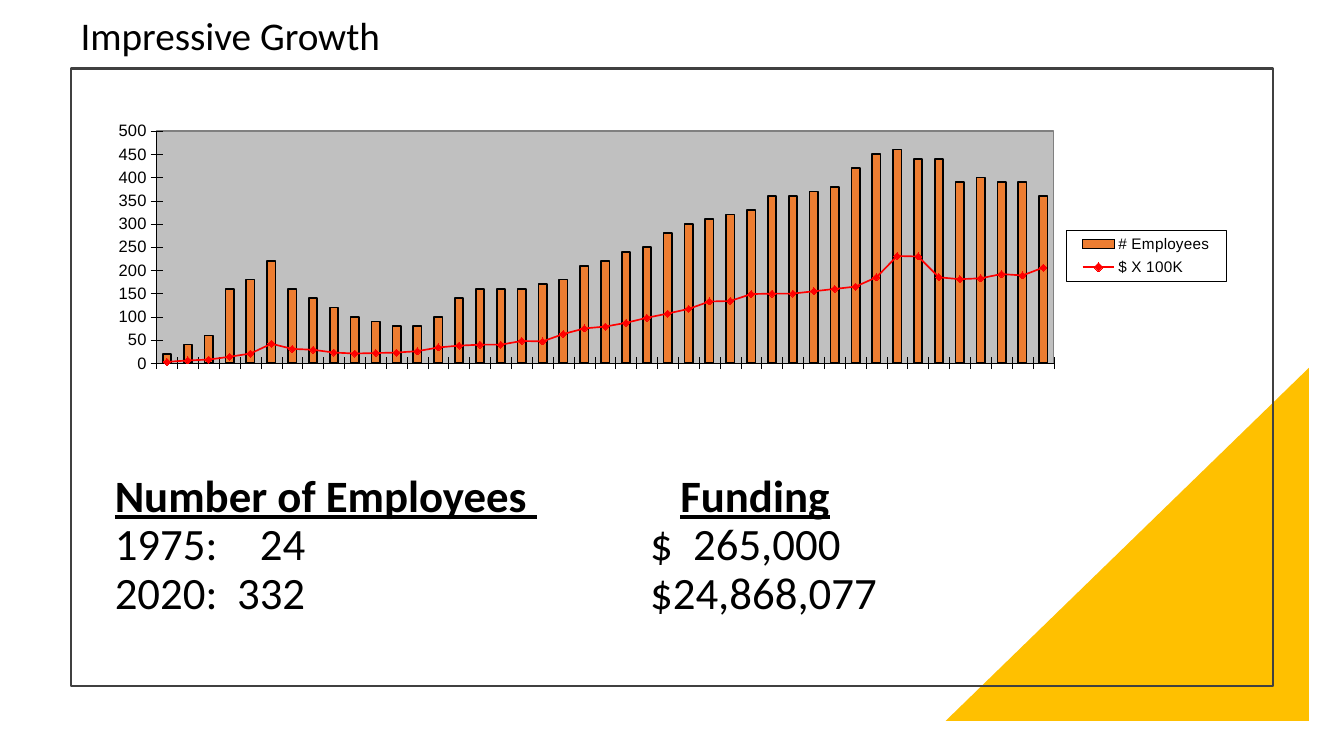
from dataclasses import dataclass

from lxml import etree
from pptx import Presentation
from pptx.chart.data import CategoryChartData
from pptx.dml.color import RGBColor
from pptx.enum.chart import (XL_CHART_TYPE, XL_LEGEND_POSITION, XL_MARKER_STYLE,
                             XL_TICK_LABEL_POSITION, XL_TICK_MARK)
from pptx.enum.shapes import MSO_SHAPE
from pptx.enum.text import MSO_ANCHOR
from pptx.oxml import parse_xml
from pptx.oxml.ns import nsdecls, qn
from pptx.util import Inches, Pt

COLUMNS = XL_CHART_TYPE.COLUMN_CLUSTERED
LEGEND_RIGHT = XL_LEGEND_POSITION.RIGHT
DIAMOND = XL_MARKER_STYLE.DIAMOND
CROSS, NO_TICK = XL_TICK_MARK.CROSS, XL_TICK_MARK.NONE
NO_LABELS = XL_TICK_LABEL_POSITION.NONE
RECTANGLE, TRIANGLE = MSO_SHAPE.RECTANGLE, MSO_SHAPE.RIGHT_TRIANGLE
TOP, BOTTOM = MSO_ANCHOR.TOP, MSO_ANCHOR.BOTTOM

SLIDE_WIDTH, SLIDE_HEIGHT = Inches(13.33), Inches(7.5)
BLACK, WHITE, AMBER, GRAPHITE = "000000", "FFFFFF", "FFC000", "404040"
ORANGE, RED, SILVER, GRAY = "ED7D31", "FF0000", "C0C0C0", "808080"
SCALE_TOP, SCALE_STEP = 500, 50

YEARS = [str(year) for year in range(1975, 2018)]
EMPLOYEES = [20, 40, 60, 160, 180, 220, 160, 140, 120, 100, 90, 80, 80, 100, 140,
             160, 160, 160, 170, 180, 210, 220, 240, 250, 280, 300, 310, 320, 330,
             360, 360, 370, 380, 420, 450, 460, 440, 440, 390, 400, 390, 390, 360]
FUNDING = [3, 6, 8, 14, 21, 42, 31, 29, 23, 21, 22, 23, 26, 34, 38, 40, 40, 48, 47,
           63, 75, 79, 87, 98, 107, 117, 133, 134, 149, 150, 150, 155, 160, 165,
           185, 231, 230, 185, 181, 183, 192, 189, 206]


@dataclass
class Area:
    left: float
    top: float
    width: float
    height: float

    def box(self) -> tuple:
        return (int(SLIDE_WIDTH * self.left / 100), int(SLIDE_HEIGHT * self.top / 100),
                int(SLIDE_WIDTH * self.width / 100), int(SLIDE_HEIGHT * self.height / 100))


@dataclass
class Panel:
    kind: int
    area: Area
    fill: str = ""
    line: str = ""
    flipped: bool = False


@dataclass
class Run:
    text: str
    bold: bool = False
    underline: bool = False


@dataclass
class Line:
    runs: list
    tabs: tuple = ()


PANELS = [
    Panel(TRIANGLE, Area(70.37, 48.67, 27.01, 46.67), fill=AMBER, flipped=True),
    Panel(RECTANGLE, Area(5.25, 9.07, 89.5, 81.73), line=GRAPHITE),
]
FIGURE_TABS = ((1.89, "r"), (5.31, "l"))
SUMMARY = [
    Line([Run("Number of Employees ", True, True), Run("\t", True),
          Run("Funding", True, True)], ((5.61, "l"),)),
    Line([Run("1975:\t24\t$  265,000")], FIGURE_TABS),
    Line([Run("2020:\t332\t$24,868,077")], FIGURE_TABS),
]


def rgb(color: str) -> RGBColor:
    return RGBColor.from_string(color)


def paint(part, fill: str = "", line: str = "", width: float = 1) -> None:
    if fill:
        part.fill.solid()
        part.fill.fore_color.rgb = rgb(fill)
    else:
        part.fill.background()
    if line:
        part.line.color.rgb = rgb(line)
        part.line.width = Pt(width)
    else:
        part.line.fill.background()


def set_font(font, size: float, name: str) -> None:
    font.size, font.name, font.color.rgb = Pt(size), name, rgb(BLACK)


def add_panel(slide, panel: Panel) -> None:
    shape = slide.shapes.add_shape(panel.kind, *panel.area.box())
    shape.shadow.inherit = False
    paint(shape, panel.fill, panel.line, 1.5)
    if panel.flipped:
        shape._element.spPr.find(qn("a:xfrm")).set("flipH", "1")


def add_text(slide, lines: list, area: Area, *, size: float, anchor=TOP,
             spacing: float = 1, after: float = 0) -> None:
    frame = slide.shapes.add_textbox(*area.box()).text_frame
    frame.word_wrap = True
    frame.vertical_anchor = anchor
    for index, line in enumerate(lines):
        paragraph = frame.add_paragraph() if index else frame.paragraphs[0]
        paragraph.line_spacing = spacing
        paragraph.space_after = Pt(after)
        for piece in line.runs:
            run = paragraph.add_run()
            run.text = piece.text
            set_font(run.font, size, "Calibri")
            run.font.bold, run.font.underline = piece.bold, piece.underline
        if line.tabs:
            stops = etree.SubElement(paragraph._p.get_or_add_pPr(), qn("a:tabLst"))
            for position, align in line.tabs:
                etree.SubElement(stops, qn("a:tab"), pos=str(Inches(position)), algn=align)


def layout(left: float, top: float, width: float, height: float, inner: bool = False):
    target = '<c:layoutTarget val="inner"/>' if inner else ""
    return parse_xml(
        f'<c:layout {nsdecls("c")}><c:manualLayout>{target}'
        '<c:xMode val="edge"/><c:yMode val="edge"/>'
        f'<c:x val="{left}"/><c:y val="{top}"/><c:w val="{width}"/><c:h val="{height}"/>'
        '</c:manualLayout></c:layout>')


def backdrop(fill: str = "", line: str = "", width: float = 1):
    def ink(color: str) -> str:
        return f'<a:solidFill><a:srgbClr val="{color}"/></a:solidFill>' if color else "<a:noFill/>"
    return parse_xml(f'<c:spPr {nsdecls("c", "a")}>{ink(fill)}'
                     f'<a:ln w="{Pt(width)}">{ink(line)}</a:ln></c:spPr>')


def hidden_axis(kind: str, own: int, other: int, side: str, limits: str, crosses: str):
    return parse_xml(
        f'<c:{kind} {nsdecls("c")}><c:axId val="{own}"/>'
        f'<c:scaling><c:orientation val="minMax"/>{limits}</c:scaling>'
        f'<c:delete val="1"/><c:axPos val="{side}"/>'
        f'<c:crossAx val="{other}"/><c:crosses val="{crosses}"/></c:{kind}>')


def discard(parent, tag: str) -> None:
    for child in parent.findall(qn(tag)):
        parent.remove(child)


def move_funding_to_line(plot_area) -> None:
    bars = plot_area.find(qn("c:barChart"))
    funding = bars.findall(qn("c:ser"))[1]
    discard(funding, "c:invertIfNegative")
    line_chart = parse_xml(
        f'<c:lineChart {nsdecls("c")}><c:grouping val="standard"/><c:varyColors val="0"/>'
        '<c:marker val="1"/><c:axId val="5001"/><c:axId val="5002"/></c:lineChart>')
    line_chart.insert(2, funding)
    bars.addnext(line_chart)
    limits = f'<c:max val="{SCALE_TOP}"/><c:min val="0"/>'
    value_axis = plot_area.find(qn("c:valAx"))
    value_axis.addnext(hidden_axis("valAx", 5002, 5001, "r", limits, "max"))
    value_axis.addnext(hidden_axis("catAx", 5001, 5002, "b", "", "autoZero"))


def style_axes(chart) -> None:
    for axis in (chart.category_axis, chart.value_axis):
        axis.major_tick_mark, axis.minor_tick_mark = CROSS, NO_TICK
        axis.has_major_gridlines = False
        axis.format.line.color.rgb = rgb(BLACK)
        axis.format.line.width = Pt(0.3)
        set_font(axis.tick_labels.font, 11.8, "Arial")
    chart.category_axis.tick_label_position = NO_LABELS
    chart.value_axis.minimum_scale, chart.value_axis.maximum_scale = 0, SCALE_TOP
    chart.value_axis.major_unit = SCALE_STEP


def style_legend(chart) -> None:
    chart.has_legend = True
    chart.legend.position, chart.legend.include_in_layout = LEGEND_RIGHT, False
    set_font(chart.legend.font, 10.9, "Arial")
    key = chart.legend._element
    discard(key, "c:layout")
    key.find(qn("c:legendPos")).addnext(layout(0.81, 0.4, 0.13, 0.18))
    key.find(qn("c:txPr")).addprevious(backdrop(WHITE, BLACK, 0.25))


def add_growth_chart(slide, area: Area) -> None:
    growth = CategoryChartData()
    growth.categories = YEARS
    growth.add_series("# Employees", EMPLOYEES)
    growth.add_series("$ X 100K", FUNDING)
    chart = slide.shapes.add_chart(COLUMNS, *area.box(), growth).chart
    chart.has_title = False
    set_font(chart.font, 11.8, "Arial")
    style_axes(chart)
    plot_area = chart._chartSpace.chart.plotArea
    move_funding_to_line(plot_area)
    staff_plot, funding_plot = chart.plots
    staff_plot.gap_width, staff_plot.vary_by_categories = 150, False
    paint(staff_plot.series[0].format, ORANGE, BLACK, 1.18)
    funding = funding_plot.series[0]
    funding.smooth = False
    funding.format.line.color.rgb = rgb(RED)
    funding.format.line.width = Pt(1.18)
    funding.marker.style, funding.marker.size = DIAMOND, 5
    paint(funding.marker.format, RED, RED)
    discard(plot_area, "c:layout")
    plot_area.insert(0, layout(0.07, 0.05, 0.73, 0.82, inner=True))
    plot_area.append(backdrop(SILVER, GRAY))
    chart._chartSpace.chart.addnext(backdrop())
    style_legend(chart)


def main() -> None:
    deck = Presentation()
    deck.slide_width, deck.slide_height = SLIDE_WIDTH, SLIDE_HEIGHT
    slide = deck.slides.add_slide(deck.slide_layouts[6])
    for panel in PANELS:
        add_panel(slide, panel)
    add_text(slide, SUMMARY, Area(7.8, 57.6, 73.22, 24.93), size=32, anchor=BOTTOM, spacing=0.9)
    add_growth_chart(slide, Area(5.25, 15.47, 91.45, 37.47))
    add_text(slide, [Line([Run("Impressive Growth")])], Area(5.25, 0.8, 59.41, 7.6),
             size=28, after=6)
    deck.save("out.pptx")


if __name__ == "__main__":
    main()
